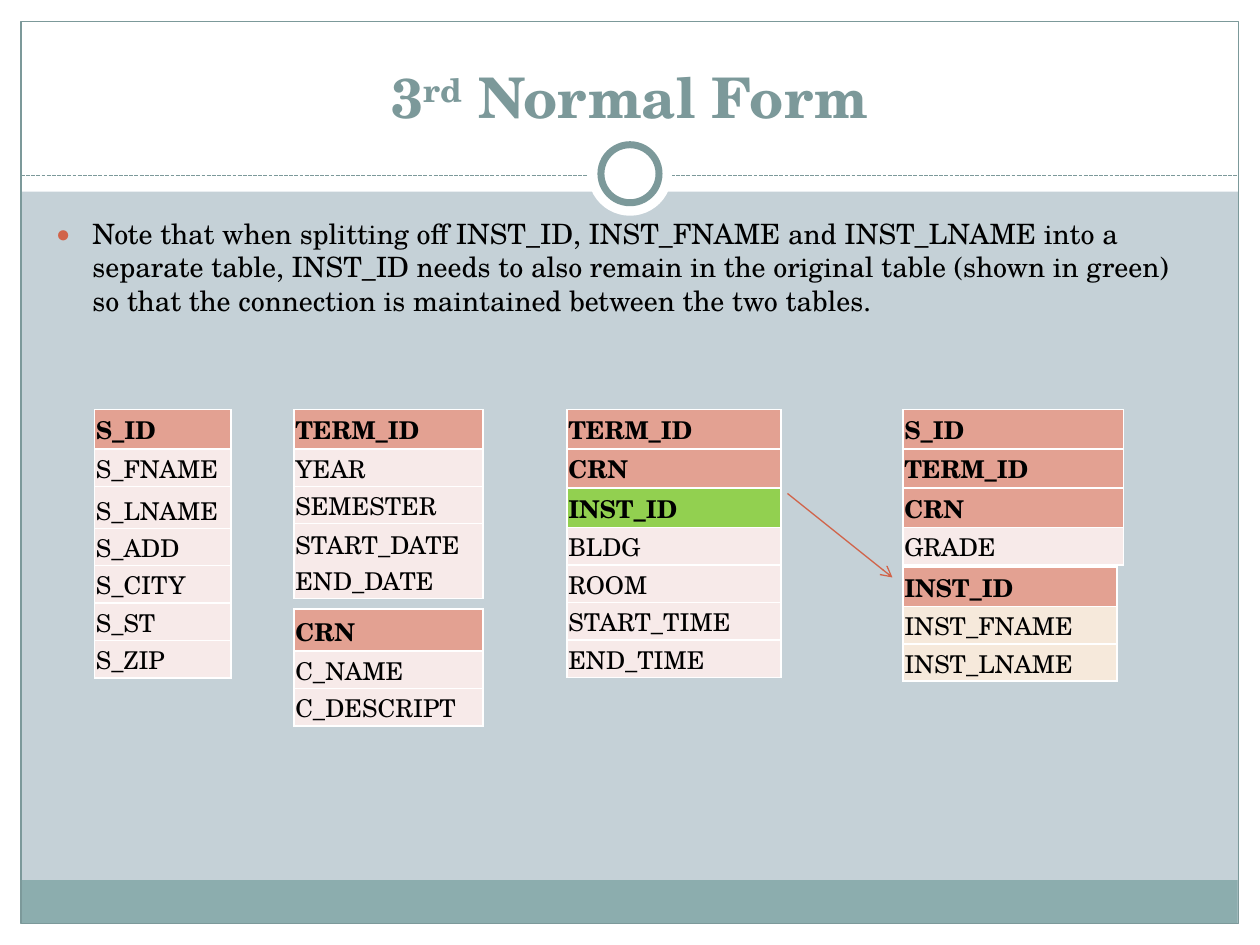
from lxml.etree import SubElement
from pptx import Presentation
from pptx.dml.color import RGBColor
from pptx.enum.dml import MSO_LINE
from pptx.enum.shapes import MSO_CONNECTOR, MSO_SHAPE
from pptx.enum.text import MSO_ANCHOR, MSO_AUTO_SIZE, PP_ALIGN
from pptx.oxml.ns import qn
from pptx.util import Pt

FONT = "TeX Gyre Schola"
BLACK = RGBColor(0x00, 0x00, 0x00)
WHITE = RGBColor(0xFF, 0xFF, 0xFF)
BACKGROUND = RGBColor(0xC5, 0xD1, 0xD7)
TEAL = RGBColor(0x7C, 0x99, 0x9A)
FOOTER_TEAL = RGBColor(0x8C, 0xAD, 0xAE)
ORANGE = RGBColor(0xD1, 0x63, 0x49)
KEY_FILL = RGBColor(0xE3, 0xA1, 0x92)
LINK_FILL = RGBColor(0x92, 0xD0, 0x50)
PINK = RGBColor(0xF7, 0xEA, 0xE9)
CREAM = RGBColor(0xF6, 0xE9, 0xDB)

TITLE_RUNS = [("3", 0), ("rd", 30000), (" Normal Form", 0)]
NOTE = (
    "Note that when splitting off INST_ID, INST_FNAME and INST_LNAME into a "
    "separate table, INST_ID needs to also remain in the original table (shown in "
    "green) so that the connection is maintained between the two tables."
)

# left, top, width, key fields, linking fields, other fields, fill of other fields
ENTITIES = [
    (54, 234, 78, ["S_ID"], [],
     ["S_FNAME", "S_LNAME", "S_ADD", "S_CITY", "S_ST", "S_ZIP"], PINK),
    (168, 234, 108, ["TERM_ID"], [],
     ["YEAR", "SEMESTER", "START_DATE\nEND_DATE"], PINK),
    (168, 348, 108, ["CRN"], [], ["C_NAME", "C_DESCRIPT"], PINK),
    (324, 234, 122.4, ["TERM_ID", "CRN"], ["INST_ID"],
     ["BLDG", "ROOM", "START_TIME", "END_TIME"], PINK),
    (516, 234, 126, ["S_ID", "TERM_ID", "CRN"], [], ["GRADE"], PINK),
    (516, 324, 122.4, ["INST_ID"], [], ["INST_FNAME", "INST_LNAME"], CREAM),
]
KEY_HEIGHT, FIELD_HEIGHT = 22.4, 21.4
# Rows taller than the rule, by table position and row
TALL_ROWS = {(0, 2): 24, (2, 0): 24}

# shape, left, top, width, height, fill, line colour, line width
FRAME = [
    (MSO_SHAPE.RECTANGLE, 0, 527.8, 720, 12.2, WHITE, None, 0),
    (MSO_SHAPE.RECTANGLE, 0, 0, 720, 109.5, WHITE, None, 0),
    (MSO_SHAPE.RECTANGLE, 0, 0, 12, 540, WHITE, None, 0),
    (MSO_SHAPE.RECTANGLE, 708, 0, 12, 540, WHITE, None, 0),
    (MSO_SHAPE.RECTANGLE, 11.75, 503, 695.5, 24.5, FOOTER_TEAL, None, 0),
    (MSO_SHAPE.RECTANGLE, 12, 12.2, 695.8, 515.5, None, TEAL, 0.75),
]
RING = [
    (MSO_SHAPE.OVAL, 336, 75.3, 48, 48, WHITE, None, 0),
    (MSO_SHAPE.OVAL, 343.4, 82.7, 33.2, 33.2, WHITE, TEAL, 4),
]


def add_run(paragraph, text, size, color, bold=False):
    run = paragraph.add_run()
    run.text = text
    font = run.font
    font.name, font.size, font.bold = FONT, Pt(size), bold
    font.color.rgb = color
    return run


def add_decoration(slide, kind, left, top, width, height, fill, line, weight):
    shape = slide.shapes.add_shape(kind, Pt(left), Pt(top), Pt(width), Pt(height))
    shape.shadow.inherit = False
    if fill is None:
        shape.fill.background()
    else:
        shape.fill.solid()
        shape.fill.fore_color.rgb = fill
    if line is None:
        shape.line.fill.background()
    else:
        shape.line.color.rgb = line
        shape.line.width = Pt(weight)


def add_line(slide, start, end, color):
    line = slide.shapes.add_connector(
        MSO_CONNECTOR.STRAIGHT, *(Pt(value) for value in start + end))
    line.line.color.rgb = color
    line.line.width = Pt(0.75)
    SubElement(line.element.spPr, qn("a:effectLst"))
    return line


def place(shape, left, top, width, height, anchor):
    """Move a placeholder to the front and fix its box."""
    shape.left, shape.top = Pt(left), Pt(top)
    shape.width, shape.height = Pt(width), Pt(height)
    shape.element.getparent().append(shape.element)
    frame = shape.text_frame
    frame.word_wrap = True
    frame.auto_size = MSO_AUTO_SIZE.NONE
    frame.vertical_anchor = anchor
    return frame.paragraphs[0]


def add_bullet(paragraph):
    properties = paragraph._p.get_or_add_pPr()
    properties.set("marL", str(Pt(21.6)))
    properties.set("indent", str(-Pt(21.6)))
    color = SubElement(properties, qn("a:buClr"))
    SubElement(color, qn("a:srgbClr"), val=str(ORANGE))
    SubElement(properties, qn("a:buSzPct"), val="85000")
    SubElement(properties, qn("a:buFont"), typeface=FONT)
    SubElement(properties, qn("a:buChar"), char="●")


def format_cell(cell, text, fill, bold):
    cell.margin_left = cell.margin_right = cell.margin_top = Pt(0.75)
    cell.margin_bottom = 0
    cell.vertical_anchor = MSO_ANCHOR.BOTTOM
    frame = cell.text_frame
    for index, line in enumerate(text.split("\n")):
        paragraph = frame.add_paragraph() if index else frame.paragraphs[0]
        add_run(paragraph, line, 14, BLACK, bold)
    properties = cell._tc.get_or_add_tcPr()
    for side in ("lnL", "lnR", "lnT", "lnB"):
        border = SubElement(properties, qn(f"a:{side}"), w=str(Pt(1)))
        solid = SubElement(border, qn("a:solidFill"))
        SubElement(solid, qn("a:srgbClr"), val=str(WHITE))
    cell.fill.solid()
    cell.fill.fore_color.rgb = fill


def add_entity(slide, number, left, top, width, keys, links, fields, field_fill):
    rows = [(text, KEY_FILL, True) for text in keys]
    rows += [(text, LINK_FILL, True) for text in links]
    rows += [(text, field_fill, False) for text in fields]
    heights = [
        TALL_ROWS.get((number, index),
                      KEY_HEIGHT if bold else FIELD_HEIGHT * len(text.split("\n")))
        for index, (text, _, bold) in enumerate(rows)
    ]
    table = slide.shapes.add_table(
        len(rows), 1, Pt(left), Pt(top), Pt(width), Pt(sum(heights))).table
    table.first_row = table.horz_banding = False
    for index, (row, height) in enumerate(zip(rows, heights)):
        table.rows[index].height = Pt(height)
        format_cell(table.cell(index, 0), *row)


def main():
    presentation = Presentation()
    presentation.slide_width, presentation.slide_height = Pt(720), Pt(540)
    slide = presentation.slides.add_slide(presentation.slide_layouts[1])
    slide.background.fill.solid()
    slide.background.fill.fore_color.rgb = BACKGROUND

    for decoration in FRAME:
        add_decoration(slide, *decoration)
    divider = add_line(slide, (12, 100.5), (708, 100.5), TEAL)
    divider.line.dash_style = MSO_LINE.SQUARE_DOT
    for decoration in RING:
        add_decoration(slide, *decoration)

    title = place(slide.shapes.title, 24, 18, 672, 60, MSO_ANCHOR.BOTTOM)
    title.alignment = PP_ALIGN.CENTER
    for text, baseline in TITLE_RUNS:
        run = add_run(title, text, 32, TEAL, True)
        run.font._element.set("baseline", str(baseline))

    note = place(slide.placeholders[1], 24, 120, 669.6, 360, MSO_ANCHOR.TOP)
    note.space_before = Pt(3.2)
    add_bullet(note)
    add_run(note, NOTE, 16, BLACK)

    for number, entity in enumerate(ENTITIES):
        add_entity(slide, number, *entity)
    arrow = add_line(slide, (450, 282), (510, 330), ORANGE)
    SubElement(arrow.line._get_or_add_ln(), qn("a:tailEnd"), type="arrow")

    presentation.save("out.pptx")


if __name__ == "__main__":
    main()
